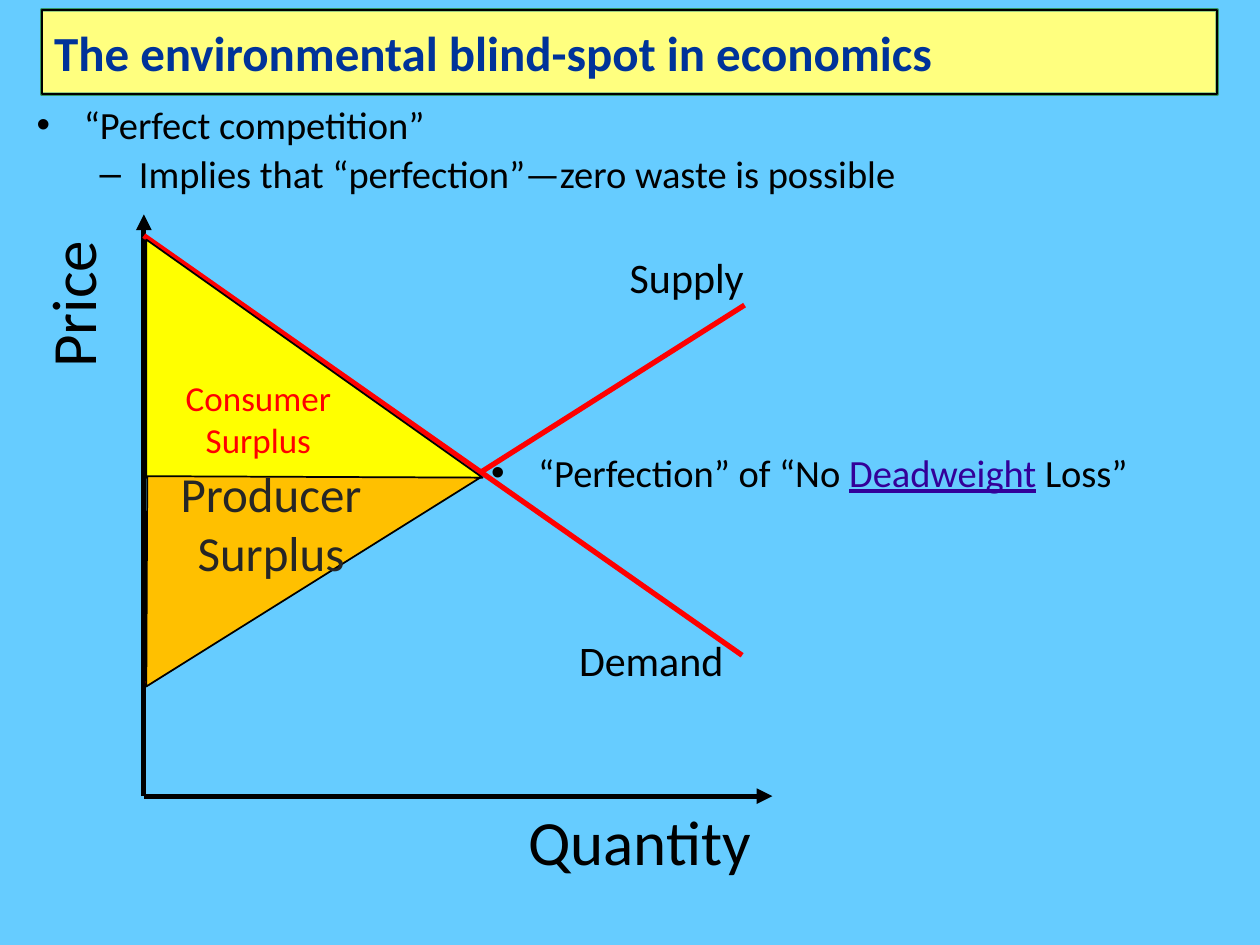
from pptx import Presentation, util as u
from pptx.dml.color import RGBColor
from pptx.enum import shapes as s, text as t
from pptx.oxml import parse_xml
from pptx.oxml.ns import nsdecls, qn

BLACK, RED = "000000", "FF0000"
PAD = (0.25, 0.13, 0.25, 0.13)
LIST_PAD = (0.1, 0.13, 0.1, 0.13)


def rgb(code):
    """Return a colour from its hex string."""
    return RGBColor.from_string(code)


def node(tag, attrs="", inner=""):
    """Make one drawing element."""
    return parse_xml(f"<a:{tag} {nsdecls('a')} {attrs}>{inner}</a:{tag}>")


def paint(shape, fill, line=BLACK, width=1):
    """Give a shape its fill and outline."""
    shape.fill.solid()
    shape.fill.fore_color.rgb = rgb(fill)
    shape.line.color.rgb = rgb(line)
    shape.line.width = u.Pt(width)


def place(shape, box):
    """Set the position and size of a shape in centimetres."""
    shape.left, shape.top, shape.width, shape.height = map(u.Cm, box)


def frame(shape, pad=PAD, anchor=t.MSO_ANCHOR.TOP, wrap=True):
    """Set the margins, anchor and wrapping of a shape's text."""
    tf = shape.text_frame
    tf.auto_size = t.MSO_AUTO_SIZE.NONE
    tf.word_wrap = wrap
    tf.vertical_anchor = anchor
    tf.margin_left, tf.margin_top, tf.margin_right, tf.margin_bottom = map(u.Cm, pad)
    return tf


def write(par, words, size=22, color=BLACK, bold=False, under=False, align=None):
    """Add a formatted run to a paragraph."""
    if align is not None:
        par.alignment = align
    run = par.add_run()
    run.text = words
    font = run.font
    font.name, font.size, font.bold = "Calibri", u.Pt(size), bold
    font.underline = under
    font.color.rgb = rgb(color)


def bullet(par, mark, left, hang):
    """Give a paragraph a bullet and a hanging indent."""
    par.space_before = u.Pt(2)
    props = par._p.get_or_add_pPr()
    props.set("marL", str(u.Cm(left)))
    props.set("indent", str(-u.Cm(hang)))
    props.append(node("buFont", 'typeface="Arial"'))
    props.append(node("buChar", f'char="{mark}"'))


def label(home, words, box, size, turn=0):
    """Add a centred one-line label."""
    item = home.add_textbox(*map(u.Cm, box))
    item.rotation = turn
    par = frame(item, wrap=False).paragraphs[0]
    write(par, words, size, align=t.PP_ALIGN.CENTER)


def line(home, start, end, color, arrow=False):
    """Draw a straight line, with an arrowhead if asked."""
    item = home.add_connector(s.MSO_CONNECTOR.STRAIGHT, *map(u.Cm, start + end))
    item.line.color.rgb = rgb(color)
    item.line.width = u.Pt(3)
    if arrow:
        item.line._get_or_add_ln().append(node("tailEnd", 'type="triangle"'))
    item._element.spPr.append(node("effectLst"))


def area(shape, words, fill, size, color, pad):
    """Paint a surplus area and write its name."""
    shape.shadow.inherit = False
    paint(shape, fill)
    par = frame(shape, pad, t.MSO_ANCHOR.MIDDLE).paragraphs[0]
    write(par, words, size, color, align=t.PP_ALIGN.CENTER)


def head(slide):
    """Set the title on its yellow band."""
    box = (0.84, 0.2, 23.7, 1.7)
    band = slide.shapes.add_shape(s.MSO_SHAPE.RECTANGLE, *map(u.Cm, box))
    band.shadow.inherit = False
    paint(band, "FFFF66", "339966", 2)
    slide.shapes._spTree.insert(2, band._element)
    title = slide.shapes.title
    place(title, box)
    paint(title, "FFFF99")
    tint = title._element.spPr.find(".//" + qn("a:srgbClr"))
    tint.append(node("alpha", 'val="50000"'))
    par = frame(title, anchor=t.MSO_ANCHOR.MIDDLE).paragraphs[0]
    write(par, "The environmental blind-spot in economics", 28, "003399",
          bold=True, align=t.PP_ALIGN.LEFT)


def points(slide):
    """Fill the list under the title."""
    body = slide.placeholders[1]
    place(body, (0.64, 1.9, 24.33, 2.1))
    tf = frame(body, LIST_PAD)
    first, second = tf.paragraphs[0], tf.add_paragraph()
    second.level = 1
    bullet(first, "•", 0.95, 0.95)
    write(first, "“Perfect competition”")
    bullet(second, "–", 2.06, 0.79)
    write(second, "Implies that “perfection”—zero waste is possible")


def axes(slide):
    """Draw the two axes with their names as a group."""
    home = slide.shapes.add_group_shape().shapes
    zero = (2.9, 16.05)
    for tip in ((2.9, 4.32), (15.57, 16.05)):
        line(home, zero, tip, BLACK, arrow=True)
    label(home, "Quantity", (10.29, 16.05, 5.21, 1.8), 36)
    label(home, "Price", (-0.15, 5.23, 3.2, 1.8), 36, turn=270)


def market(slide):
    """Draw the curves and the two surplus areas."""
    home = slide.shapes
    line(home, (2.9, 4.75), (14.96, 13.21), RED)
    label(home, "Demand", (11.35, 12.67, 3.56, 1.27), 24)
    label(home, "Supply", (12.37, 4.95, 2.95, 1.27), 24)
    line(home, (2.95, 13.79), (15.01, 6.15), RED)
    upper = home.add_shape(s.MSO_SHAPE.RIGHT_TRIANGLE,
                           *map(u.Cm, (2.95, 4.83, 6.78, 4.8)))
    area(upper, "Consumer Surplus", "FFFF00", 20, RED, (0, 0, 0, 0))
    pen = home.build_freeform(u.Cm(2.97), u.Cm(9.6))
    pen.add_line_segments([(u.Cm(9.68), u.Cm(9.63)), (u.Cm(2.95), u.Cm(13.84))])
    area(pen.convert_to_shape(), "Producer Surplus", "FFC000", 28, "262626",
         (0, 0, 1.7, 2.39))


def remark(slide):
    """Add the bullet beside the crossing point."""
    item = slide.shapes.add_textbox(*map(u.Cm, (9.8, 8.92, 14.12, 1.45)))
    par = frame(item, LIST_PAD).paragraphs[0]
    bullet(par, "•", 0.95, 0.95)
    write(par, "“Perfection” of “No ")
    write(par, "Deadweight", color="330099", under=True)
    write(par, " Loss”")


def main():
    """Build the slide and save it."""
    deck = Presentation()
    deck.slide_width, deck.slide_height = u.Cm(25.4), u.Cm(19.05)
    slide = deck.slides.add_slide(deck.slide_layouts[1])
    slide.background.fill.solid()
    slide.background.fill.fore_color.rgb = rgb("66CCFF")
    for part in (head, points, axes, market, remark):
        part(slide)
    deck.save("out.pptx")


if __name__ == "__main__":
    main()
